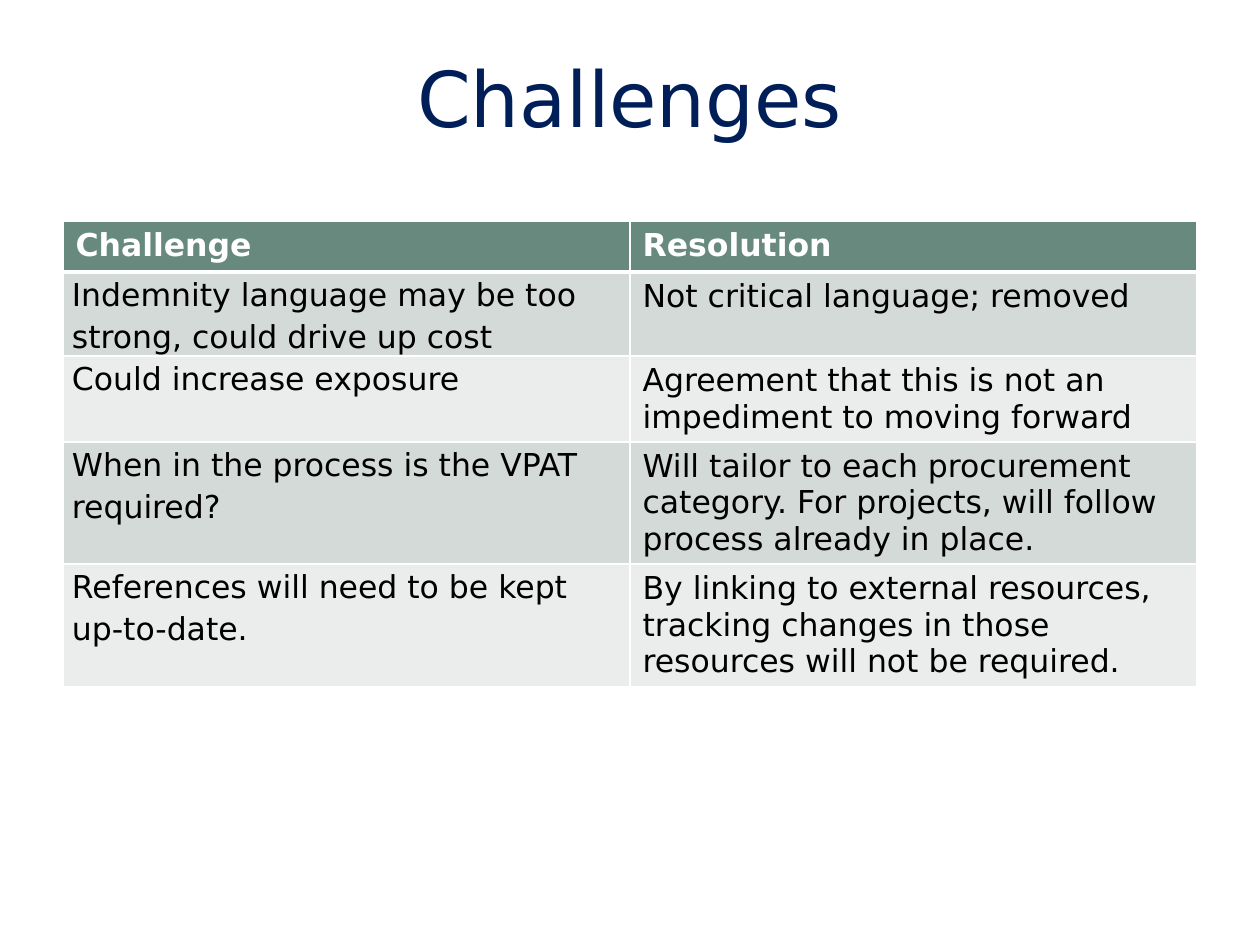
"""Build the Challenges slide: a title above a table of challenges and resolutions."""
from typing import NamedTuple

from lxml.etree import SubElement
from pptx import Presentation
from pptx.dml.color import RGBColor
from pptx.enum.text import MSO_ANCHOR, MSO_AUTO_SIZE, PP_ALIGN
from pptx.oxml.ns import qn
from pptx.util import Emu, Pt

PX_PER_INCH = 126
FONT = "DejaVu Sans"
NAVY = RGBColor(0x00, 0x1F, 0x59)
WHITE = RGBColor(0xFF, 0xFF, 0xFF)
BLACK = RGBColor(0x00, 0x00, 0x00)
HEADER_GREEN = RGBColor(0x68, 0x8A, 0x7E)
BANDS = (RGBColor(0xD4, 0xDA, 0xD8), RGBColor(0xEB, 0xED, 0xEC))
THIN, THICK = Pt(1), Pt(3)


class Entry(NamedTuple):
    challenge: str
    resolution: str


HEADER = Entry("Challenge", "Resolution")
ENTRIES = (
    Entry("Indemnity language may be too strong, could drive up cost",
          "Not critical language; removed"),
    Entry("Could increase exposure",
          "Agreement that this is not an impediment to moving forward"),
    Entry("When in the process is the VPAT required?",
          "Will tailor to each procurement category. "
          "For projects, will follow process already in place."),
    Entry("References will need to be kept up-to-date.",
          "By linking to external resources, tracking changes in those "
          "resources will not be required."),
)


def px(length: int) -> Emu:
    """Turn pixels into EMU."""
    return Emu(round(length * 914400 / PX_PER_INCH))


def write(frame, text: str, *, size: int = 18, color: RGBColor = BLACK,
          bold: bool = False, align=None, spacing=None) -> None:
    """Put one formatted paragraph into a text frame."""
    paragraph = frame.paragraphs[0]
    paragraph.alignment = align
    paragraph.line_spacing = spacing
    run = paragraph.add_run()
    run.text = text
    run.font.name = FONT
    run.font.size = Pt(size)
    run.font.bold = bold
    run.font.color.rgb = color


def style_cell(cell, fill: RGBColor, top: int = THIN, bottom: int = THIN) -> None:
    """Give a cell white borders and a solid fill."""
    properties = cell._tc.get_or_add_tcPr()
    for side, width in (("L", THIN), ("R", THIN), ("T", top), ("B", bottom)):
        border = SubElement(properties, qn(f"a:ln{side}"), w=str(int(width)))
        solid = SubElement(border, qn("a:solidFill"))
        SubElement(solid, qn("a:srgbClr"), val=str(WHITE))
    cell.fill.solid()
    cell.fill.fore_color.rgb = fill


def add_title(slide, text: str) -> None:
    """Fill and place the title placeholder."""
    title = slide.shapes.title
    title.left, title.top, title.width, title.height = px(63), px(38), px(1134), px(157)
    frame = title.text_frame
    frame.auto_size = MSO_AUTO_SIZE.NONE
    frame.vertical_anchor = MSO_ANCHOR.TOP
    frame.margin_top = px(13)
    write(frame, text, size=44, color=NAVY, align=PP_ALIGN.CENTER)


def add_challenges(slide) -> None:
    """Draw the table of challenges and resolutions."""
    row_height = px(51)
    row_count = len(ENTRIES) + 1
    table = slide.shapes.add_table(row_count, 2, px(63), px(221), px(1134),
                                   row_height * row_count).table
    for column, heading in enumerate(HEADER):
        cell = table.cell(0, column)
        style_cell(cell, HEADER_GREEN, bottom=THICK)
        write(cell.text_frame, heading, color=WHITE, bold=True)
    for row, entry in enumerate(ENTRIES, start=1):
        challenge, resolution = table.cell(row, 0), table.cell(row, 1)
        for cell in (challenge, resolution):
            style_cell(cell, BANDS[(row - 1) % 2], top=THICK if row == 1 else THIN)
        challenge.margin_left = challenge.margin_right = px(9)
        challenge.margin_top = challenge.margin_bottom = 0
        write(challenge.text_frame, entry.challenge, spacing=1.15)
        write(resolution.text_frame, entry.resolution)


def main() -> None:
    """Build and save the presentation."""
    presentation = Presentation()
    presentation.slide_width, presentation.slide_height = px(1260), px(945)
    slide = presentation.slides.add_slide(presentation.slide_layouts[5])
    add_title(slide, "Challenges")
    add_challenges(slide)
    presentation.save("out.pptx")


if __name__ == "__main__":
    main()
